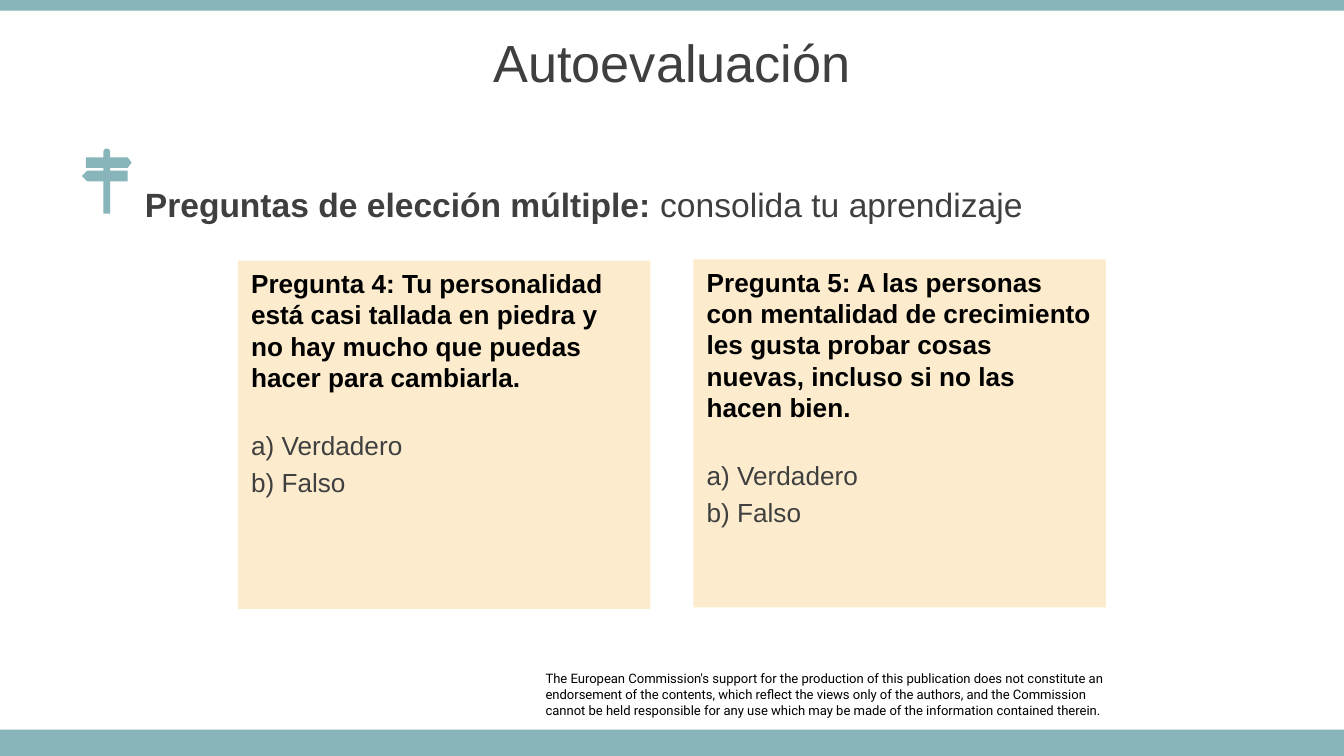
import math

import pptx
import pptx.dml.color
import pptx.enum.shapes
import pptx.enum.text
import pptx.util
from pptx.util import Inches

COLORS = {"teal": "87B5BA", "cream": "FCECCD", "gray": "3F3F3F", "black": "000000"}
PP_ALIGN = pptx.enum.text.PP_ALIGN
MSO_ANCHOR = pptx.enum.text.MSO_ANCHOR


class SlideBuilder:
    def __init__(self, slide, font="Arial"):
        self.slide = slide
        self.font = font

    def color(self, name):
        return pptx.dml.color.RGBColor.from_string(COLORS[name])

    def style(self, font, size, color, bold=False, face=None):
        font.name = face or self.font
        font.size = pptx.util.Pt(size)
        font.bold = bold
        font.color.rgb = self.color(color)

    def paint(self, shape, color):
        shape.shadow.inherit = False
        shape.fill.solid()
        shape.fill.fore_color.rgb = self.color(color)
        shape.line.fill.background()

    def title(self, text, left, top, width, height):
        title = self.slide.shapes.title
        title.left, title.top = Inches(left), Inches(top)
        title.width, title.height = Inches(width), Inches(height)
        title.text_frame.vertical_anchor = MSO_ANCHOR.MIDDLE
        title.text_frame.text = text
        paragraph = title.text_frame.paragraphs[0]
        paragraph.alignment = PP_ALIGN.CENTER
        self.style(paragraph.font, 28, "gray")

    def rectangle(self, left, top, width, height, color):
        shape = self.slide.shapes.add_shape(
            pptx.enum.shapes.MSO_SHAPE.RECTANGLE,
            Inches(left), Inches(top), Inches(width), Inches(height))
        self.paint(shape, color)
        return shape

    def text_box(self, left, top, width, height):
        box = self.slide.shapes.add_textbox(
            Inches(left), Inches(top), Inches(width), Inches(height))
        box.text_frame.word_wrap = True
        return box.text_frame

    def heading(self, lead, rest, left, top, width, height):
        frame = self.text_box(left, top, width, height)
        frame.vertical_anchor = MSO_ANCHOR.MIDDLE
        for text, bold in ((lead, True), (rest, False)):
            run = frame.paragraphs[0].add_run()
            run.text = text
            self.style(run.font, 18, "gray", bold)

    def question(self, text, options, left, top, width, height, margin_right):
        frame = self.rectangle(left, top, width, height, "cream").text_frame
        frame.word_wrap = True
        frame.margin_right = Inches(margin_right)
        frame.vertical_anchor = MSO_ANCHOR.TOP
        frame.text = "\n".join([text, *options])
        for i, paragraph in enumerate(frame.paragraphs):
            paragraph.alignment = PP_ALIGN.LEFT
            self.style(paragraph.font, 14, "gray" if i else "black", bold=i == 0)
            if i:
                # The first option stands one line further from the question
                paragraph.space_before = pptx.util.Pt(19.6 if i == 1 else 2.8)

    def disclaimer(self, lines, left, top, width, height):
        frame = self.text_box(left, top, width, height)
        frame.margin_left = frame.margin_right = 0
        frame.margin_top = frame.margin_bottom = 0
        frame.text = "\n".join(lines)
        for paragraph in frame.paragraphs:
            self.style(paragraph.font, 7, "black", face="Roboto")

    def outline(self, points, color):
        corners = [(Inches(x), Inches(y)) for x, y in points]
        builder = self.slide.shapes.build_freeform(*corners[0])
        builder.add_line_segments(corners[1:], close=True)
        self.paint(builder.convert_to_shape(), color)


def signpost_points():
    """Post with a rounded cap, one sign pointing right and one left."""
    post_left, post_right, cap_y = 0.77, 0.82, 1.13
    center, radius = (post_left + post_right) / 2, (post_right - post_left) / 2
    cap = [(center + radius * math.cos(math.radians(a)),
            cap_y - radius * math.sin(math.radians(a))) for a in range(180, -1, -20)]
    right_side = [(post_right, 1.17), (0.95, 1.17), (0.98, 1.21), (0.95, 1.25),
                  (post_right, 1.25), (post_right, 1.27), (0.95, 1.27),
                  (0.95, 1.35), (post_right, 1.35), (post_right, 1.59)]
    left_side = [(post_left, 1.59), (post_left, 1.35), (0.65, 1.35), (0.61, 1.31),
                 (0.65, 1.27), (post_left, 1.27), (post_left, 1.25), (0.64, 1.25),
                 (0.64, 1.17), (post_left, 1.17)]
    return cap + right_side + left_side


def main():
    deck = pptx.Presentation()
    deck.slide_width = Inches(10)
    deck.slide_height = Inches(10 * 9 / 16)
    page = SlideBuilder(deck.slides.add_slide(deck.slide_layouts[5]))

    # Footer note and page bands
    page.disclaimer(
        ["The European Commission's support for the production of this publication "
         "does not constitute an endorsement of the contents, which reflect the views "
         "only of the authors, and the Commission",
         "cannot be held responsible for any use which may be made of the information "
         "contained therein."],
        4.06, 4.99, 4.17, 0.35)
    page.rectangle(0, 5.43, 10, 0.2, "teal")
    page.rectangle(0, 0, 10, 0.08, "teal")

    # Title and heading with its signpost
    page.title("Autoevaluación", 0, 0.14, 10, 0.63)
    page.heading("Preguntas de elección múltiple: ", "consolida tu aprendizaje",
                 0.98, 1.28, 7.24, 0.48)
    page.outline(signpost_points(), "teal")

    # Question cards
    options = ["a) Verdadero", "b) Falso"]
    questions = [
        ("Pregunta 4: Tu personalidad está casi tallada en piedra y no hay mucho "
         "que puedas hacer para cambiarla.", 1.77, 1.94, 0.15),
        ("Pregunta 5: A las personas con mentalidad de crecimiento les gusta probar "
         "cosas nuevas, incluso si no las hacen bien.", 5.16, 1.93, 0.1),
    ]
    for text, left, top, margin_right in questions:
        page.question(text, options, left, top, 3.07, 2.59, margin_right)

    deck.save("out.pptx")


if __name__ == "__main__":
    main()
